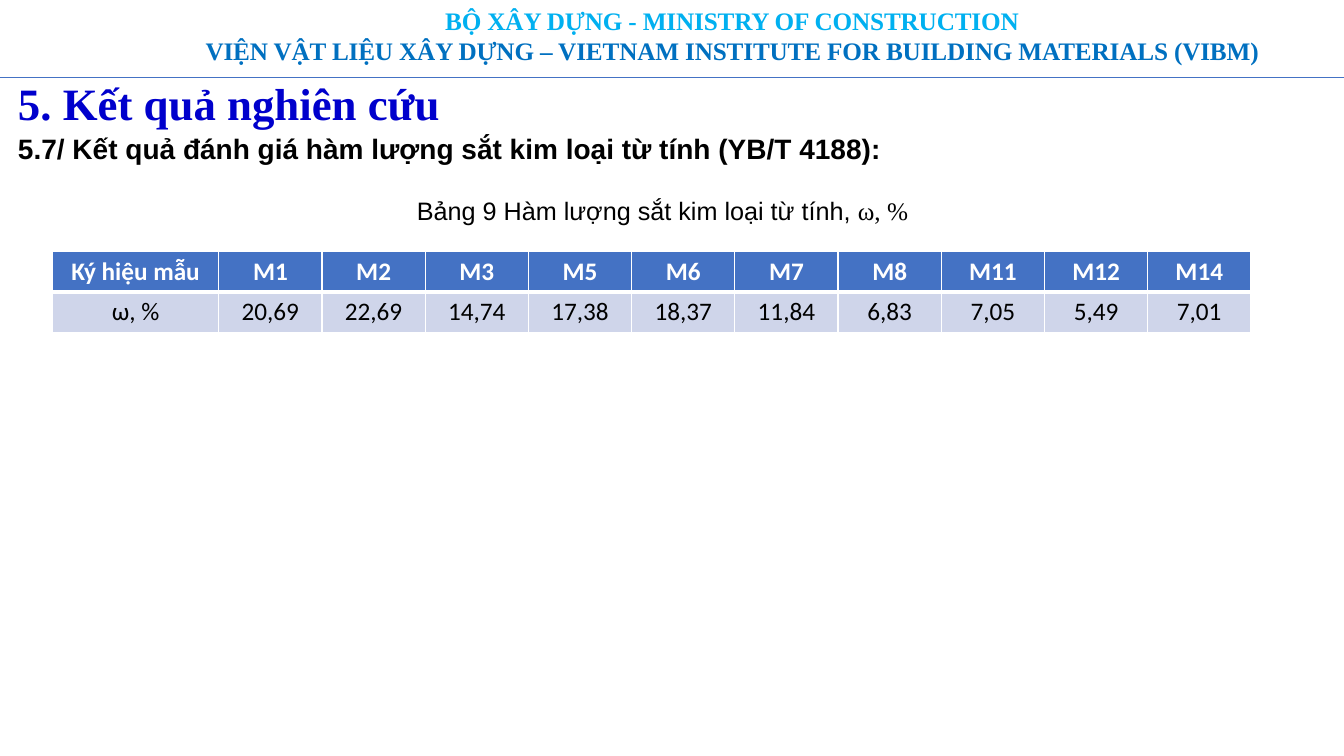
from lxml import etree
from pptx import Presentation
from pptx.dml.color import RGBColor
from pptx.enum.shapes import MSO_CONNECTOR
from pptx.enum.text import MSO_ANCHOR, PP_ALIGN
from pptx.oxml.ns import qn
from pptx.util import Inches, Pt

WHITE = RGBColor(0xFF, 0xFF, 0xFF)
BLACK = RGBColor(0, 0, 0)
SKY = RGBColor(0x00, 0xB0, 0xF0)
BLUE = RGBColor(0x00, 0x70, 0xC0)
TITLE_BLUE = RGBColor(0x00, 0x00, 0xCC)
HEADER_FILL = RGBColor(0x44, 0x72, 0xC4)
BODY_FILL = RGBColor(0xCF, 0xD5, 0xEA)
SERIF, SANS, TABLE_FONT = "Times New Roman", "Arial", "Calibri"

# Each paragraph: alignment, runs of (text, font, size, colour, bold)
BANNER = [
    (PP_ALIGN.CENTER, [("BỘ XÂY DỰNG - MINISTRY OF CONSTRUCTION", SERIF, 18, SKY, True)]),
    (PP_ALIGN.CENTER, [("VIỆN VẬT LIỆU XÂY DỰNG – VIETNAM INSTITUTE FOR BUILDING MATERIALS (VIBM)",
                        SERIF, 18, BLUE, True)]),
]
TITLE = [(PP_ALIGN.LEFT, [("5. Kết quả nghiên cứu", SERIF, 32, TITLE_BLUE, True)])]
SECTION = [
    (PP_ALIGN.JUSTIFY, [("5.7/ Kết quả đánh giá hàm lượng sắt kim loại từ tính (YB/T 4188):",
                         SANS, 20, BLACK, True)]),
    (PP_ALIGN.CENTER, [("Bảng 9 Hàm lượng sắt kim loại từ tính, ", SANS, 18, BLACK, False),
                       ("ω, %", SERIF, 18, BLACK, False)]),
]
IRON_CONTENT = [
    ("Ký hiệu mẫu", "M1", "M2", "M3", "M5", "M6", "M7", "M8", "M11", "M12", "M14"),
    ("ω, %", "20,69", "22,69", "14,74", "17,38", "18,37", "11,84", "6,83", "7,05", "5,49", "7,01"),
]
LABEL_WIDTH, SAMPLE_WIDTH, ROW_HEIGHT = 1.65, 1.024, 0.405


def format_font(font, name, size, color, bold):
    font.name, font.size, font.bold = name, Pt(size), bold
    font.color.rgb = color


def add_text(slide, box, paragraphs):
    text_frame = slide.shapes.add_textbox(*map(Inches, box)).text_frame
    text_frame.word_wrap = True
    for index, (alignment, runs) in enumerate(paragraphs):
        paragraph = text_frame.paragraphs[0] if index == 0 else text_frame.add_paragraph()
        paragraph.alignment = alignment
        for text, *style in runs:
            run = paragraph.add_run()
            run.text = text
            format_font(run.font, *style)
    return text_frame


def set_borders(cell, widths):
    """Draw white cell borders; widths maps a side (L, R, T, B) to points."""
    properties = cell._tc.get_or_add_tcPr()
    for index, (side, width) in enumerate(widths.items()):
        line = etree.Element(qn(f"a:ln{side}"), w=str(Pt(width)))
        fill = etree.SubElement(line, qn("a:solidFill"))
        etree.SubElement(fill, qn("a:srgbClr"), val=str(WHITE))
        properties.insert(index, line)


def add_iron_table(slide):
    columns = len(IRON_CONTENT[0])
    width = LABEL_WIDTH + SAMPLE_WIDTH * (columns - 1)
    table = slide.shapes.add_table(
        len(IRON_CONTENT), columns, Inches(0.52), Inches(2.49),
        Inches(width), Inches(ROW_HEIGHT * len(IRON_CONTENT))).table
    for index, column in enumerate(table.columns):
        column.width = Inches(SAMPLE_WIDTH if index else LABEL_WIDTH)
    for row_index, values in enumerate(IRON_CONTENT):
        is_header = row_index == 0
        for column_index, value in enumerate(values):
            cell = table.cell(row_index, column_index)
            cell.text = value
            cell.vertical_anchor = MSO_ANCHOR.MIDDLE
            cell.fill.solid()
            cell.fill.fore_color.rgb = HEADER_FILL if is_header else BODY_FILL
            paragraph = cell.text_frame.paragraphs[0]
            paragraph.alignment = PP_ALIGN.CENTER
            format_font(paragraph.runs[0].font, TABLE_FONT, 18,
                        WHITE if is_header else BLACK, is_header)
            set_borders(cell, {"L": 1, "R": 1, "T": 1 if is_header else 3,
                               "B": 3 if is_header else 1})


def main():
    presentation = Presentation()
    presentation.slide_width, presentation.slide_height = Inches(13.33), Inches(7.5)
    slide = presentation.slides.add_slide(presentation.slide_layouts[6])

    banner = add_text(slide, (1.51, 0, 11.5, 1.01), BANNER)
    for paragraph in banner.paragraphs:
        paragraph.runs[0].font._element.set("spc", "-10")

    rule = slide.shapes.add_connector(
        MSO_CONNECTOR.STRAIGHT, 0, Inches(0.77), presentation.slide_width, Inches(0.77))
    rule.line.color.rgb = HEADER_FILL
    rule.line.width = Pt(0.5)
    etree.SubElement(rule._element.spPr, qn("a:effectLst"))

    title = add_text(slide, (0.08, 0.92, 12.41, 0.26), TITLE)
    title.vertical_anchor = MSO_ANCHOR.MIDDLE
    title.paragraphs[0].line_spacing = 0.9

    section = add_text(slide, (0.08, 1.26, 12.98, 1.04), SECTION)
    section.paragraphs[1].space_before = Pt(21)

    add_iron_table(slide)
    presentation.save("out.pptx")


if __name__ == "__main__":
    main()
